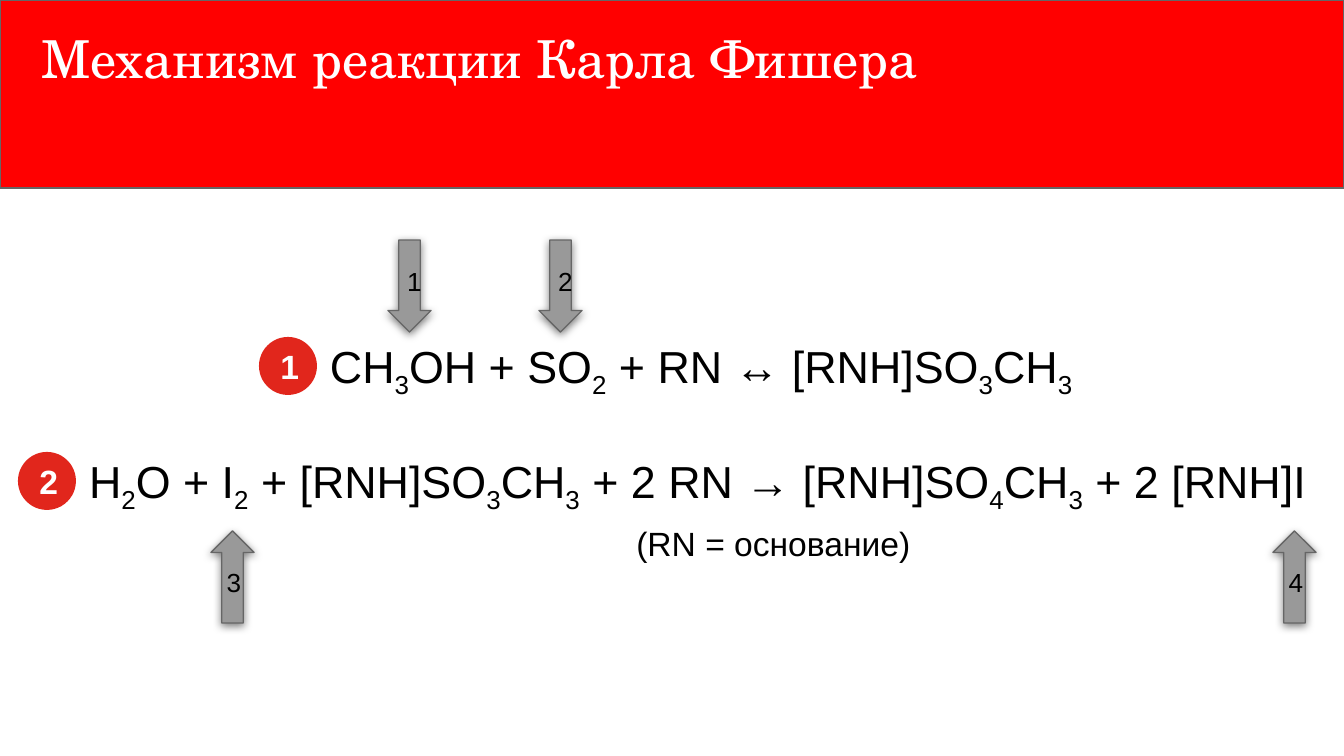
from dataclasses import dataclass

from lxml import etree
from pptx import Presentation
from pptx.dml.color import RGBColor as Rgb
from pptx.enum import shapes, text
from pptx.oxml import ns
from pptx.util import Pt

PX = 914400 / 134.4  # EMU in one px
Kind = shapes.MSO_SHAPE
Align = text.PP_ALIGN
Anchor = text.MSO_ANCHOR


@dataclass(frozen=True)
class Theme:
    serif: str = "TeX Gyre Schola"
    sans: str = "Arial"
    band: str = "FF0000"
    badge: str = "E1261C"
    arrow: str = "999999"
    edge: str = "666666"
    light: str = "FFFFFF"
    dark: str = "000000"
    head: int = 28
    body: int = 24
    note: int = 18
    mark: int = 14


T = Theme()


def emu(*vals):
    return [round(v * PX) for v in vals]


def style(run, face, size, color, bold=False):
    font = run.font
    font.name, font.size, font.bold = face, Pt(size), bold
    font.color.rgb = Rgb.from_string(color)


def setup(frame, pad, anchor=Anchor.TOP):
    """Set insets (left, top, right, bottom) and vertical anchor."""
    (frame.margin_left, frame.margin_top,
     frame.margin_right, frame.margin_bottom) = emu(*pad)
    frame.vertical_anchor = anchor
    frame.word_wrap = True


def shape(parent, kind, box, fill, edge=None):
    item = parent.add_shape(kind, *emu(*box))
    item.shadow.inherit = False
    item.fill.solid()
    item.fill.fore_color.rgb = Rgb.from_string(fill)
    if edge:
        item.line.color.rgb = Rgb.from_string(edge)
        item.line.width = Pt(0.75)
    else:
        item.line.fill.background()
    return item


def label(item, words, size, color, pad, align=Align.CENTER, bold=False):
    frame = item.text_frame
    setup(frame, pad, Anchor.MIDDLE)
    frame.text = words
    para = frame.paragraphs[0]
    para.alignment = align
    style(para.runs[0], T.sans, size, color, bold)


def formula(parent, box, words, size):
    """Write text in which the character after each _ is a subscript."""
    frame = parent.add_textbox(*emu(*box)).text_frame
    setup(frame, (13, 7, 13, 7))
    para = frame.paragraphs[0]
    first, *rest = words.split("_")
    parts = [(first, False)]
    for part in rest:
        parts += [(part[0], True), (part[1:], False)]
    for part, low in parts:
        if part:
            run = para.add_run()
            run.text = part
            style(run, T.sans, size, T.dark)
            if low:
                run.font._element.set("baseline", "-25000")


def badge(parent, x, y, num):
    item = shape(parent, Kind.OVAL, (x, y, 58, 58), T.badge)
    label(item, num, T.note, T.light, (13, 7, 13, 7), bold=True)


def shade(item):
    """Add a soft shadow below the shape."""
    effects = item._element.spPr.find(ns.qn("a:effectLst"))
    outer = etree.SubElement(effects, ns.qn("a:outerShdw"), blurRad="57150",
                             dist="19050", dir="5400000", rotWithShape="0")
    color = etree.SubElement(outer, ns.qn("a:srgbClr"), val=T.dark)
    etree.SubElement(color, ns.qn("a:alpha"), val="50000")


def arrow(parent, kind, x, y, num, left, align):
    item = shape(parent, kind, (x, y, 43, 92), T.arrow, T.edge)
    shade(item)
    label(item, num, T.mark, T.dark, (left, 13, 13, 13), align)


def title(slide, box, words):
    item = slide.shapes.title
    item.left, item.top, item.width, item.height = emu(*box)
    frame = item.text_frame
    setup(frame, (13, 13, 13, 13))
    frame.auto_size = text.MSO_AUTO_SIZE.NONE
    frame.text = words
    para = frame.paragraphs[0]
    para.alignment = Align.LEFT
    style(para.runs[0], T.serif, T.head, T.light)


def main():
    deck = Presentation()
    deck.slide_width, deck.slide_height = emu(1344, 756)
    slide = deck.slides.add_slide(deck.slide_layouts[5])
    tree = slide.shapes

    # Red band, moved behind the title
    band = shape(tree, Kind.RECTANGLE, (0, 0, 1344, 188), T.band, T.edge)
    tree._spTree.insert(2, band._element)
    title(slide, (28, 13, 1309, 167), "Механизм реакции Карла Фишера")

    # First step
    step = tree.add_group_shape().shapes
    formula(step, (317, 332, 788, 67),
            "CH_3OH + SO_2 + RN ↔ [RNH]SO_3CH_3", T.body)
    badge(step, 259, 337, "1")

    # Second step with its note
    step = tree.add_group_shape().shapes
    formula(step, (618, 516, 320, 54), "_ (RN = основание)", T.note)
    formula(step, (76, 447, 1261, 67),
            "H_2O + I_2 + [RNH]SO_3CH_3 + 2 RN → [RNH]SO_4CH_3 + 2 [RNH]I",
            T.body)
    badge(step, 18, 452, "2")

    # Numbered arrows above and below the formulas
    for x, num in ((388, "1"), (539, "2")):
        arrow(tree, Kind.DOWN_ARROW, x, 240, num, 13, Align.CENTER)
    for x, num in ((211, "3"), (1273, "4")):
        arrow(tree, Kind.UP_ARROW, x, 531, num, 5, Align.LEFT)

    deck.save("out.pptx")


if __name__ == "__main__":
    main()
